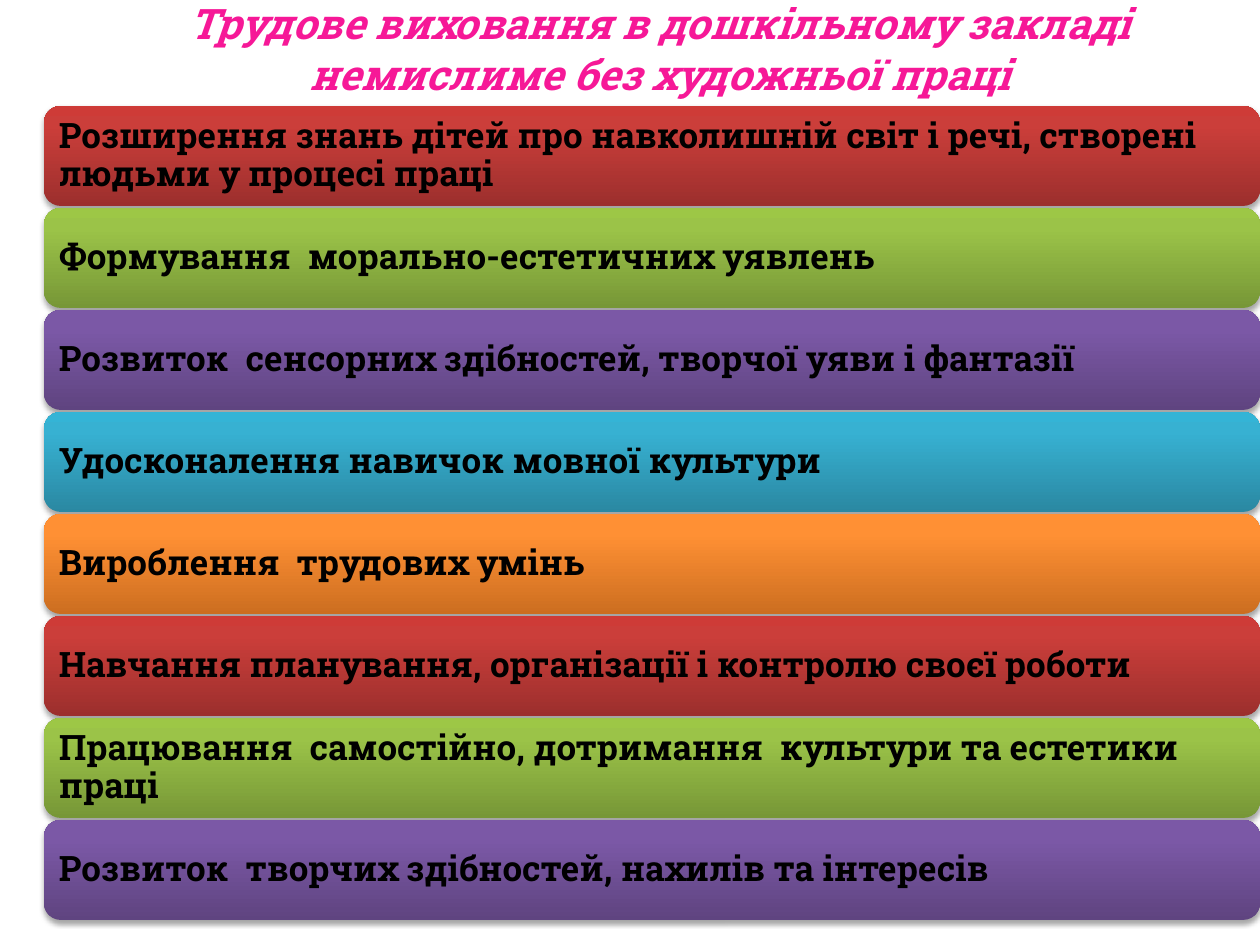
import pptx
import pptx.util
import pptx.dml.color
import pptx.enum.shapes
import pptx.enum.text
import pptx.oxml
import pptx.oxml.ns
import copy

PX_PER_INCH = 126
FONT = "Roboto Slab"
STOPS = (0, 0.8, 1)
RED = ("9C2F2D", "CB3E3A", "CE3B37")
GREEN = ("779737", "9BC348", "9DC746")
PURPLE = ("5F4480", "7B58A6", "7C57A8")
BLUE = ("2A88A2", "37B1D2", "34B4D6")
ORANGE = ("CC6E20", "FF9034", "FF9136")
PALETTE = (RED, GREEN, PURPLE, BLUE, ORANGE)

TITLE = "Трудове виховання в дошкільному закладі немислиме без художньої праці"
TASKS = (
    "Розширення знань дітей про навколишній світ і речі, створені людьми у процесі праці",
    "Формування  морально-естетичних уявлень",
    "Розвиток  сенсорних здібностей, творчої уяви і фантазії",
    "Удосконалення навичок мовної культури",
    "Вироблення  трудових умінь",
    "Навчання планування, організації і контролю своєї роботи",
    "Працювання  самостійно, дотримання  культури та естетики праці",
    "Розвиток  творчих здібностей, нахилів та інтересів",
)
BAR_LEFT, BAR_TOP, BAR_WIDTH, BAR_HEIGHT, BAR_STEP = 44, 106, 1216, 100, 102


def px(length):
    return pptx.util.Inches(length / PX_PER_INCH)


def color(code):
    return pptx.dml.color.RGBColor.from_string(code)


def write(shape, text, *, size, ink, align, inset, italic=False, spacing=None):
    frame = shape.text_frame
    frame.word_wrap = True
    frame.vertical_anchor = pptx.enum.text.MSO_ANCHOR.MIDDLE
    frame.margin_left = frame.margin_right = px(inset)
    frame.margin_top = frame.margin_bottom = px(6)
    para = frame.paragraphs[0]
    para.alignment = align
    para.line_spacing = spacing
    span = para.add_run()
    span.text = text
    span.font.name = FONT
    span.font.size = pptx.util.Pt(size)
    span.font.bold = True
    span.font.italic = italic
    span.font.color.rgb = color(ink)


def fill_gradient(shape, codes):
    shape.fill.gradient()
    shape.fill.gradient_angle = 90
    stop_list = shape._element.spPr.find(".//" + pptx.oxml.ns.qn("a:gsLst"))
    stop_list.append(copy.deepcopy(stop_list[0]))
    for stop, position, code in zip(shape.fill.gradient_stops, STOPS, codes):
        stop.color.rgb = color(code)
        stop.position = position


def add_shadow(shape):
    shape.shadow.inherit = False
    effects = shape._element.spPr.find(pptx.oxml.ns.qn("a:effectLst"))
    effects.append(pptx.oxml.parse_xml(
        f'<a:outerShdw {pptx.oxml.ns.nsdecls("a")} blurRad="40000" dist="23000"'
        ' dir="5400000" rotWithShape="0"><a:srgbClr val="000000">'
        '<a:alpha val="35000"/></a:srgbClr></a:outerShdw>'))


def add_title(page, text):
    box = page.shapes.add_textbox(px(84), px(0), px(1152), px(96))
    write(box, text, size=24, ink="F61897", italic=True, inset=12,
          align=pptx.enum.text.PP_ALIGN.CENTER)


def add_bar(page, top, text, codes):
    bar = page.shapes.add_shape(
        pptx.enum.shapes.MSO_SHAPE.ROUNDED_RECTANGLE,
        px(BAR_LEFT), px(top), px(BAR_WIDTH), px(BAR_HEIGHT))
    fill_gradient(bar, codes)
    bar.line.fill.background()
    add_shadow(bar)
    write(bar, text, size=20, ink="000000", spacing=0.9, inset=10,
          align=pptx.enum.text.PP_ALIGN.LEFT)


def main():
    deck = pptx.Presentation()
    deck.slide_width, deck.slide_height = px(1260), px(945)
    page = deck.slides.add_slide(deck.slide_layouts[6])
    add_title(page, TITLE)
    for index, task in enumerate(TASKS):
        add_bar(page, BAR_TOP + index * BAR_STEP, task, PALETTE[index % len(PALETTE)])
    deck.save("out.pptx")


if __name__ == "__main__":
    main()
